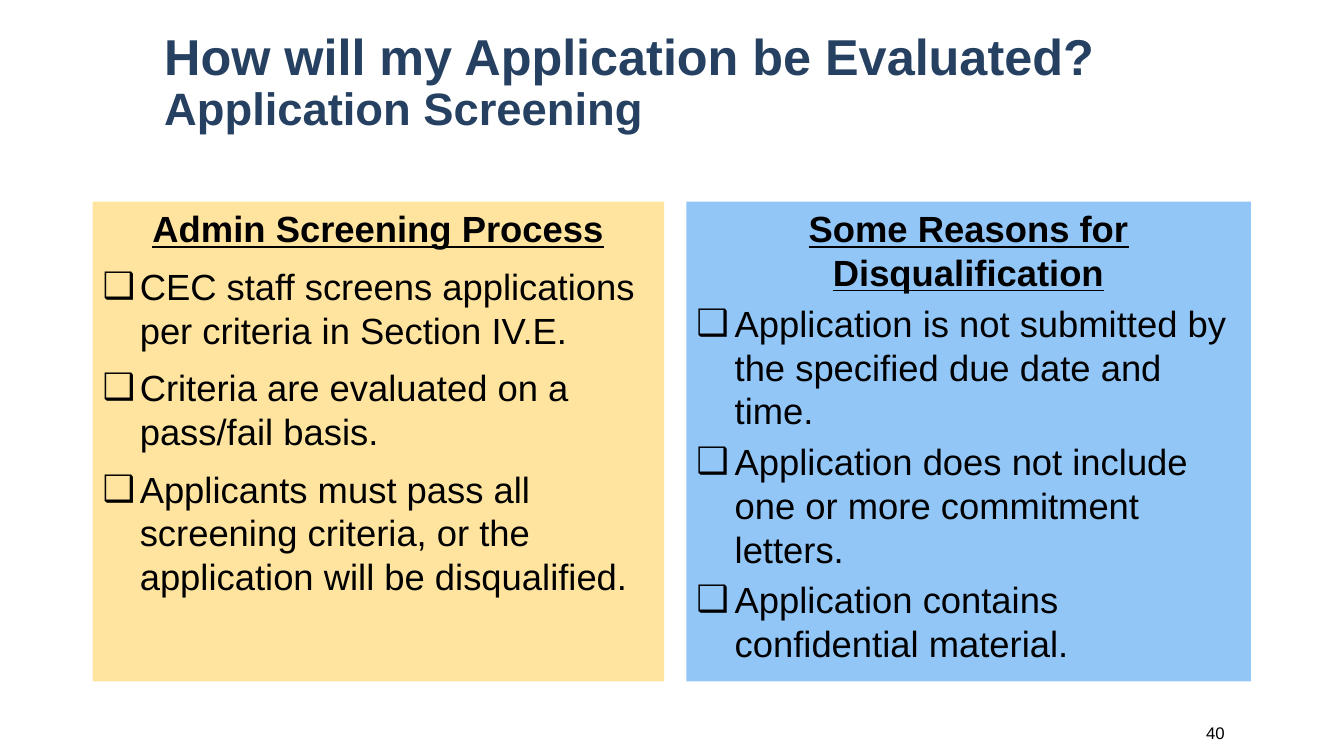
"""Build the application screening slide."""
from lxml import etree
from pptx import Presentation
from pptx.dml.color import RGBColor
from pptx.enum.shapes import MSO_SHAPE as Shape
from pptx.enum.text import MSO_ANCHOR as Anchor, PP_ALIGN as Align
from pptx.oxml.ns import qn
from pptx.util import Pt

COLORS = {"title": "254061", "text": "000000", "process": "FFE49F", "reasons": "91C6F7"}
FONT = "Arial"
BODY_SIZE = 26
PANEL_TOP, PANEL_HEIGHT = 144, 342.7


def format_font(font, size, color, bold=False, underline=False):
    """Apply the slide's typeface with the given look."""
    font.name = FONT
    font.size = Pt(size)
    font.bold = bold
    font.underline = underline
    font.color.rgb = RGBColor.from_string(COLORS[color])


def add_text(slide, left, top, width, height):
    """Add a wrapping, vertically centred text box and return its frame."""
    frame = slide.shapes.add_textbox(Pt(left), Pt(top), Pt(width), Pt(height)).text_frame
    frame.word_wrap = True
    frame.vertical_anchor = Anchor.MIDDLE
    return frame


def add_title(slide, lines, sizes):
    """Add the title, one size for each line."""
    paragraph = add_text(slide, 110.2, 18.7, 784, 82).paragraphs[0]
    paragraph.text = "\v".join(lines)
    paragraph.line_spacing = 0.9
    for run, size in zip(paragraph.runs, sizes):
        format_font(run.font, size, "title", bold=True)


def add_bullet(paragraph, indent):
    """Give a paragraph a box bullet with a hanging indent."""
    properties = paragraph._p.get_or_add_pPr()
    properties.set("marL", str(Pt(indent)))
    properties.set("indent", str(-Pt(indent)))
    etree.SubElement(properties, qn("a:buFont")).set("typeface", FONT)
    etree.SubElement(properties, qn("a:buChar")).set("char", "❑")


def add_panel(slide, left, width, fill, heading, items, indent, gap):
    """Add a coloured panel with a heading and a checklist."""
    panel = slide.shapes.add_shape(
        Shape.RECTANGLE, Pt(left), Pt(PANEL_TOP), Pt(width), Pt(PANEL_HEIGHT))
    panel.shadow.inherit = False
    panel.fill.solid()
    panel.fill.fore_color.rgb = RGBColor.from_string(COLORS[fill])
    panel.line.fill.background()
    frame = panel.text_frame
    frame.word_wrap = True
    frame.vertical_anchor = Anchor.TOP
    frame.text = "\n".join([heading, *items])
    title, *entries = frame.paragraphs
    title.alignment = Align.CENTER
    format_font(title.runs[0].font, BODY_SIZE, "text", bold=True, underline=True)
    for entry in entries:
        entry.alignment = Align.LEFT
        entry.space_before = Pt(gap)
        add_bullet(entry, indent)
        format_font(entry.runs[0].font, BODY_SIZE, "text")


def add_page_number(slide, number):
    """Add the page number at the lower right."""
    paragraph = add_text(slide, 743, 509, 139, 28.8).paragraphs[0]
    paragraph.text = number
    paragraph.alignment = Align.RIGHT
    format_font(paragraph.runs[0].font, 12, "text")


def main():
    """Build and save the presentation."""
    presentation = Presentation()
    presentation.slide_width, presentation.slide_height = Pt(960), Pt(540)
    slide = presentation.slides.add_slide(presentation.slide_layouts[6])
    add_title(slide, ["How will my Application be Evaluated?", "Application Screening"],
              [36, 32.4])
    add_panel(slide, 66.2, 408.2, "process", "Admin Screening Process", [
        "CEC staff screens applications per criteria in Section IV.E.",
        "Criteria are evaluated on a pass/fail basis.",
        "Applicants must pass all screening criteria, or the application will be disqualified.",
    ], indent=26.6, gap=10)
    add_panel(slide, 490.3, 403.2, "reasons", "Some Reasons for Disqualification", [
        "Application is not submitted by the specified due date and time.",
        "Application does not include one or more commitment letters.",
        "Application contains confidential material.",
    ], indent=27.4, gap=5.2)
    add_page_number(slide, "40")
    presentation.save("out.pptx")


if __name__ == "__main__":
    main()
